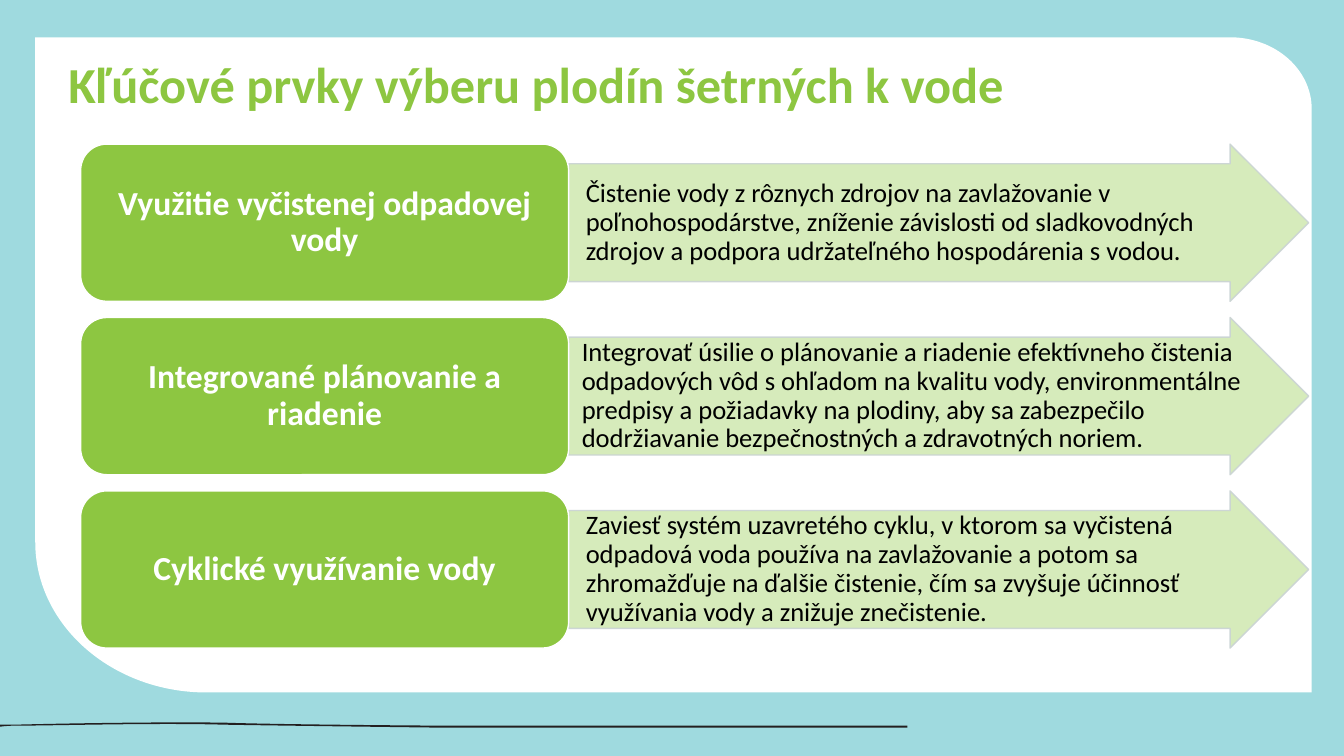
import pptx
import pptx.dml.color
import pptx.enum.shapes
import pptx.enum.text
import pptx.oxml
import pptx.oxml.ns
import pptx.util

Inches = pptx.util.Inches
Pt = pptx.util.Pt
Shape = pptx.enum.shapes.MSO_SHAPE
Align = pptx.enum.text.PP_ALIGN
Anchor = pptx.enum.text.MSO_ANCHOR
qualified = pptx.oxml.ns.qn
namespace = pptx.oxml.ns.nsdecls("a")


def paint(fill, colour):
    fill.solid()
    fill.fore_color.rgb = pptx.dml.color.RGBColor.from_string(colour)


def write(shape, text, size, colour, bold=False, align=Align.LEFT,
          anchor=Anchor.MIDDLE, margins=(0.1, 0.05, 0.1, 0.05)):
    frame = shape.text_frame
    frame.word_wrap = True
    frame.vertical_anchor = anchor
    (frame.margin_left, frame.margin_top,
     frame.margin_right, frame.margin_bottom) = [Inches(side) for side in margins]
    para = frame.paragraphs[0]
    para.alignment = align
    para.line_spacing = 0.9
    span = para.add_run()
    span.text = text
    span.font.name = "Calibri"
    span.font.size = Pt(size)
    span.font.bold = bold
    paint(span.font.fill, colour)


GREEN, PALE_GREEN, WHITE, BLACK = "8DC641", "D6EBBB", "FFFFFF", "000000"

deck = pptx.Presentation()
deck.slide_width = Inches(13.33)
deck.slide_height = Inches(7.5)
page = deck.slides.add_slide(deck.slide_layouts[6])

backdrop = page.shapes.add_shape(Shape.RECTANGLE, 0, 0, deck.slide_width, deck.slide_height)
backdrop.shadow.inherit = False
paint(backdrop.fill, "9FDADF")
backdrop.line.fill.background()

panel = [
    (0.35, 0.37), (12.2, 0.37), (12.65, 0.37, 13.01, 0.69, 13.01, 1.08),
    (13.01, 6.87), (2.05, 6.87), (1.11, 6.87, 0.35, 6.2, 0.35, 5.38),
]
wave = [
    (9, 7.22), (4.43, 7.22), (4.41, 7.22, 2.8, 7.2, 2.23, 7.19),
    (1.55, 7.17, 0.52, 7.2, 0.14, 7.2), (0.06, 7.2, 0.01, 7.21, 0, 7.21),
    (0, 7.19), (0.01, 7.19, 0.06, 7.19, 0.14, 7.19),
    (0.52, 7.18, 1.55, 7.16, 2.23, 7.17), (2.81, 7.19, 4.41, 7.2, 4.43, 7.2),
    (9, 7.2),
]
for outline, colour in [(panel, WHITE), (wave, "231F20")]:
    corners = [(Inches(x), Inches(y)) for segment in outline
               for x, y in zip(segment[::2], segment[1::2])]
    builder = page.shapes.build_freeform(*corners[0])
    builder.add_line_segments(corners[1:], close=True)
    shape = builder.convert_to_shape()
    shape.shadow.inherit = False
    paint(shape.fill, colour)
    shape.line.fill.background()
    lines = iter(list(shape._element.iter(qualified("a:lnTo"))))
    for segment in outline[1:]:
        first = next(lines)
        if len(segment) == 6:
            curve = pptx.oxml.parse_xml("<a:cubicBezTo %s/>" % namespace)
            first.addprevious(curve)
            for line in (first, next(lines), next(lines)):
                curve.append(line[0])
                line.getparent().remove(line)

title = page.shapes.add_textbox(Inches(0.58), Inches(0.55), Inches(11.59), Inches(0.88))
write(title, "Kľúčové prvky výberu plodín šetrných k vode", 36, GREEN,
      bold=True, anchor=Anchor.TOP)

LEFT, TOP, LABEL_WIDTH, ARROW_WIDTH = 0.8, 1.43, 4.84, 7.34
ROW_HEIGHT, ROW_PITCH = 1.56, 1.72
MIDDLE = LEFT + LABEL_WIDTH
rows = [
    ("Využitie vyčistenej odpadovej vody",
     "Čistenie vody z rôznych zdrojov na zavlažovanie v poľnohospodárstve, zníženie "
     "závislosti od sladkovodných zdrojov a podpora udržateľného hospodárenia s vodou.",
     0.17, 6.67),
    ("Integrované plánovanie a riadenie",
     "Integrovať úsilie o plánovanie a riadenie efektívneho čistenia odpadových vôd s "
     "ohľadom na kvalitu vody, environmentálne predpisy a požiadavky na plodiny, aby sa "
     "zabezpečilo dodržiavanie bezpečnostných a zdravotných noriem.",
     0.13, 6.75),
    ("Cyklické využívanie vody",
     "Zaviesť systém uzavretého cyklu, v ktorom sa vyčistená odpadová voda používa na "
     "zavlažovanie a potom sa zhromažďuje na ďalšie čistenie, čím sa zvyšuje účinnosť "
     "využívania vody a znižuje znečistenie.",
     0.17, 6.67),
]
for index, (heading, detail, left_margin, detail_width) in enumerate(rows):
    top = TOP + index * ROW_PITCH
    arrow = page.shapes.add_shape(
        Shape.RIGHT_ARROW, Inches(MIDDLE), Inches(top),
        Inches(ARROW_WIDTH), Inches(ROW_HEIGHT))
    arrow.adjustments[0] = 0.75
    arrow.adjustments[1] = 0.5
    detail_box = page.shapes.add_textbox(
        Inches(MIDDLE), Inches(top + ROW_HEIGHT / 8),
        Inches(detail_width), Inches(ROW_HEIGHT * 0.75))
    label = page.shapes.add_shape(
        Shape.ROUNDED_RECTANGLE, Inches(LEFT), Inches(top),
        Inches(LABEL_WIDTH), Inches(ROW_HEIGHT))
    for shape, fill, line in [(arrow, PALE_GREEN, "CAD3D4"), (label, GREEN, WHITE)]:
        shape.shadow.inherit = False
        paint(shape.fill, fill)
        paint(shape.line.fill, line)
        shape.line.width = Pt(1)
    line_colour = arrow.line._ln.find(".//" + qualified("a:srgbClr"))
    line_colour.append(pptx.oxml.parse_xml('<a:alpha %s val="89000"/>' % namespace))
    write(detail_box, detail, 19, BLACK, margins=(left_margin, 0.01, 0.01, 0.01))
    write(label, heading, 24, WHITE, bold=True, align=Align.CENTER)

deck.save("out.pptx")
